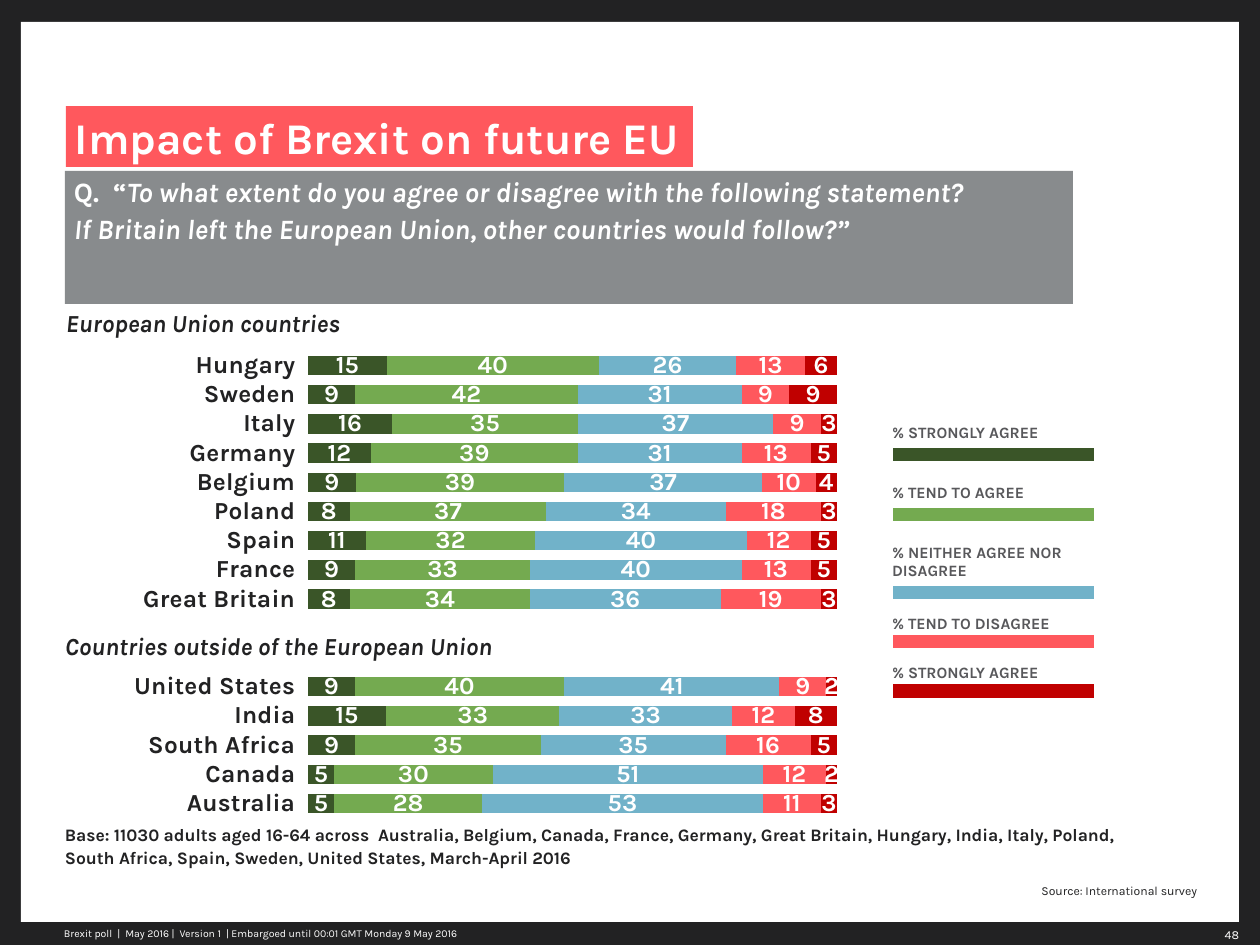
from lxml import etree
from pptx import Presentation
from pptx import util as u
from pptx.chart.data import CategoryChartData
from pptx.dml.color import RGBColor
from pptx.enum import chart as ch, shapes, text
from pptx.oxml import parse_xml
from pptx.oxml.ns import nsdecls, qn

# Content
TITLE = "Impact of Brexit on future EU"
QUESTION = [
    [("Q.  “", False), ("To what extent do you agree or disagree with the following statement?", True)],
    [("If Britain left the European Union, other countries would follow?”", True)],
]
BASE = ("Base: 11030 adults aged 16-64 across  Australia, Belgium, Canada, France, Germany, "
        "Great Britain, Hungary, India, Italy, Poland, South Africa, Spain, Sweden, "
        "United States, March-April 2016")
SOURCE = "Source: International survey"
FOOTER = "Brexit poll  |  May 2016 |  Version 1  | Embargoed until 00:01 GMT Monday 9 May 2016"
PAGE = "48"
HEADINGS = [("European Union countries", (66, 308, 402, 30)),
            ("Countries outside of the European Union", (65, 631, 470, 30))]
EU = [
    ("Hungary", 15, 40, 26, 13, 6),
    ("Sweden", 9, 42, 31, 9, 9),
    ("Italy", 16, 35, 37, 9, 3),
    ("Germany", 12, 39, 31, 13, 5),
    ("Belgium", 9, 39, 37, 10, 4),
    ("Poland", 8, 37, 34, 18, 3),
    ("Spain", 11, 32, 40, 12, 5),
    ("France", 9, 33, 40, 13, 5),
    ("Great Britain", 8, 34, 36, 19, 3),
]
OUTSIDE = [
    ("United States", 9, 40, 41, 9, 2),
    ("India", 15, 33, 33, 12, 8),
    ("South Africa", 9, 35, 35, 16, 5),
    ("Canada", 5, 30, 51, 12, 2),
    ("Australia", 5, 28, 53, 11, 3),
]
GAP = ("", None, None, None, None, None)
# Legend: label, colour name, label row height in px
LEGEND = [
    ("% STRONGLY AGREE", "dark green", 30),
    ("% TEND TO AGREE", "green", 30),
    ("% NEITHER AGREE NOR DISAGREE", "blue", 48),
    ("% TEND TO DISAGREE", "coral", 19),
    ("% STRONGLY AGREE", "red", 20),
]
COLOURS = {"ink": "222223", "white": "FFFFFF", "grey": "888B8D", "label": "58585B",
           "dark green": "3A5528", "green": "74AA50", "blue": "71B2C9",
           "coral": "FF585D", "red": "C00000"}
FONT = "Karla"
BAR = 15


def px(number):
    return round(number * 914400 / 126)


def colour(name):
    return RGBColor.from_string(COLOURS[name])


def paint(fill, name):
    fill.solid()
    fill.fore_color.rgb = colour(name)


def style(font, size, name, bold=False, italic=False):
    font.name, font.size = FONT, u.Pt(size)
    font.bold, font.italic = bold, italic
    font.color.rgb = colour(name)


def place(shape, box):
    shape.left, shape.top, shape.width, shape.height = map(px, box)


def write(frame, paragraphs, size, name, bold=False, align=text.PP_ALIGN.LEFT,
          anchor=text.MSO_ANCHOR.TOP, insets=(0, 0), spacing=1.0, hang=0):
    """Fill a frame with paragraphs, each a list of (words, italic) runs."""
    frame.auto_size = text.MSO_AUTO_SIZE.NONE
    frame.word_wrap = True
    frame.vertical_anchor = anchor
    frame.margin_left = frame.margin_right = px(insets[0])
    frame.margin_top = frame.margin_bottom = px(insets[1])
    for index, runs in enumerate(paragraphs):
        paragraph = frame.add_paragraph() if index else frame.paragraphs[0]
        properties = paragraph._p.get_or_add_pPr()
        properties.set("marL", str(px(hang)))
        properties.set("indent", str(-px(hang)))
        etree.SubElement(properties, qn("a:buNone"))
        paragraph.alignment = align
        paragraph.line_spacing = spacing
        paragraph.space_before = paragraph.space_after = u.Pt(0)
        for words, italic in runs:
            run = paragraph.add_run()
            run.text = words
            style(run.font, size, name, bold, italic)


def add_text(slide, box, words, size, name, italic=False, **options):
    shape = slide.shapes.add_textbox(*map(px, box))
    write(shape.text_frame, [[(words, italic)]], size, name, **options)


def add_chart(slide):
    rows = EU + [GAP, GAP] + OUTSIDE
    data = CategoryChartData(number_format="0")
    data.categories = [row[0] for row in rows]
    for index in range(1, 6):
        data.add_series(f"Series {index}", [row[index] for row in rows])
    chart = slide.shapes.add_chart(ch.XL_CHART_TYPE.BAR_STACKED_100,
                                   *map(px, (134, 309, 1063, 525)), data).chart
    chart.has_legend = chart.has_title = False
    style(chart.font, 18, "ink")
    countries = chart.category_axis
    countries.reverse_order = True
    countries.format.line.fill.background()
    style(countries.tick_labels.font, 14, "ink", bold=True)
    chart.value_axis.has_major_gridlines = False
    chart.value_axis.visible = False
    plot = chart.plots[0]
    plot.gap_width, plot.overlap, plot.vary_by_categories = 50, 100, False
    for series, (_, name, _) in zip(plot.series, LEGEND):
        paint(series.format.fill, name)
        labels = series.data_labels
        labels.show_value = True
        labels.number_format, labels.number_format_is_linked = "0", False
        style(labels.font, 14, "white", bold=True)
    # Fixed inner plot area
    area = chart._chartSpace.chart.plotArea
    for old in area.findall(qn("c:layout")):
        area.remove(old)
    parts = [("layoutTarget", "inner"), ("xMode", "edge"), ("yMode", "edge"),
             ("x", 0.16), ("y", 0.08), ("w", 0.5), ("h", 0.89)]
    inside = "".join(f'<c:{tag} val="{value}"/>' for tag, value in parts)
    area.insert(0, parse_xml(f'<c:layout {nsdecls("c")}><c:manualLayout>{inside}'
                             '</c:manualLayout></c:layout>'))


def add_legend(slide):
    heights = [height for _, _, label in LEGEND for height in (label, BAR, BAR)]
    table = slide.shapes.add_table(len(heights), 1, *map(px, (892, 417, 203, sum(heights)))).table
    table.first_row = table.horz_banding = False
    for row, height in zip(table.rows, heights):
        row.height = px(height)
        cell = row.cells[0]
        cell.fill.background()
        cell.margin_left = cell.margin_right = cell.margin_top = cell.margin_bottom = 0
    for index, (words, name, height) in enumerate(LEGEND):
        label, bar, space = (table.cell(3 * index + offset, 0) for offset in range(3))
        label.vertical_anchor = text.MSO_ANCHOR.MIDDLE
        if height >= 2 * BAR:
            label.vertical_anchor = text.MSO_ANCHOR.BOTTOM
            label.margin_bottom = px(4)
        run = label.text_frame.paragraphs[0].add_run()
        run.text = words
        style(run.font, 9, "label", bold=True)
        paint(bar.fill, name)
        for empty in (bar, space):
            end = etree.SubElement(empty.text_frame.paragraphs[0]._p, qn("a:endParaRPr"))
            end.set("sz", "500")


def main():
    presentation = Presentation()
    presentation.slide_width, presentation.slide_height = px(1260), px(945)
    slide = presentation.slides.add_slide(presentation.slide_layouts[4])
    paint(slide.background.fill, "ink")
    title, question, base, source, spare = slide.placeholders
    spare._element.getparent().remove(spare._element)

    # White page, behind everything
    page = slide.shapes.add_shape(shapes.MSO_SHAPE.RECTANGLE, *map(px, (21, 22, 1218, 900)))
    page.shadow.inherit = False
    paint(page.fill, "white")
    page.line.fill.background()
    slide.shapes._spTree.insert(2, page._element)

    # Title, question and notes on the data
    bottom = text.MSO_ANCHOR.BOTTOM
    right = text.PP_ALIGN.RIGHT
    place(title, (66, 106, 627, 61))
    paint(title.fill, "coral")
    write(title.text_frame, [[(TITLE, False)]], 25, "white", bold=True, anchor=bottom, insets=(9, 4))
    place(question, (65, 171, 1008, 133))
    paint(question.fill, "grey")
    write(question.text_frame, QUESTION, 16, "white", bold=True, insets=(9, 0), spacing=1.1, hang=33)
    place(base, (65, 845, 1091, 23))
    write(base.text_frame, [[(BASE, False)]], 10, "ink", bold=True, anchor=bottom, spacing=1.1)
    place(source, (850, 875, 347, 23))
    write(source.text_frame, [[(SOURCE, False)]], 7, "ink", align=right, anchor=bottom, spacing=1.1)

    # Chart, its headings and legend
    add_chart(slide)
    for words, box in HEADINGS:
        add_text(slide, box, words, 14, "ink", italic=True, bold=True)
    add_legend(slide)

    # Footer
    add_text(slide, (64, 922, 577, 23), FOOTER, 6, "white", anchor=text.MSO_ANCHOR.MIDDLE)
    add_text(slide, (1180, 922, 68, 25), PAGE, 7, "white", align=right, insets=(9, 4), spacing=1.1)
    presentation.save("out.pptx")


if __name__ == "__main__":
    main()
